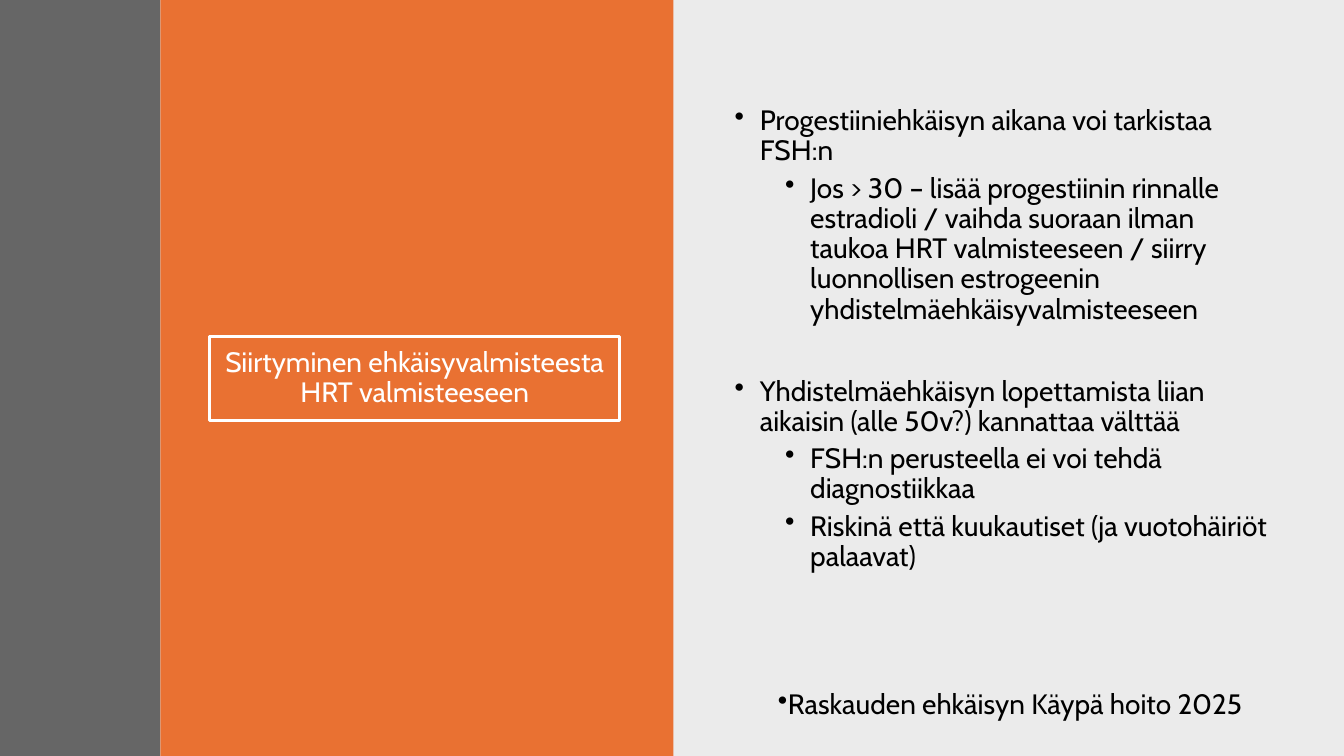
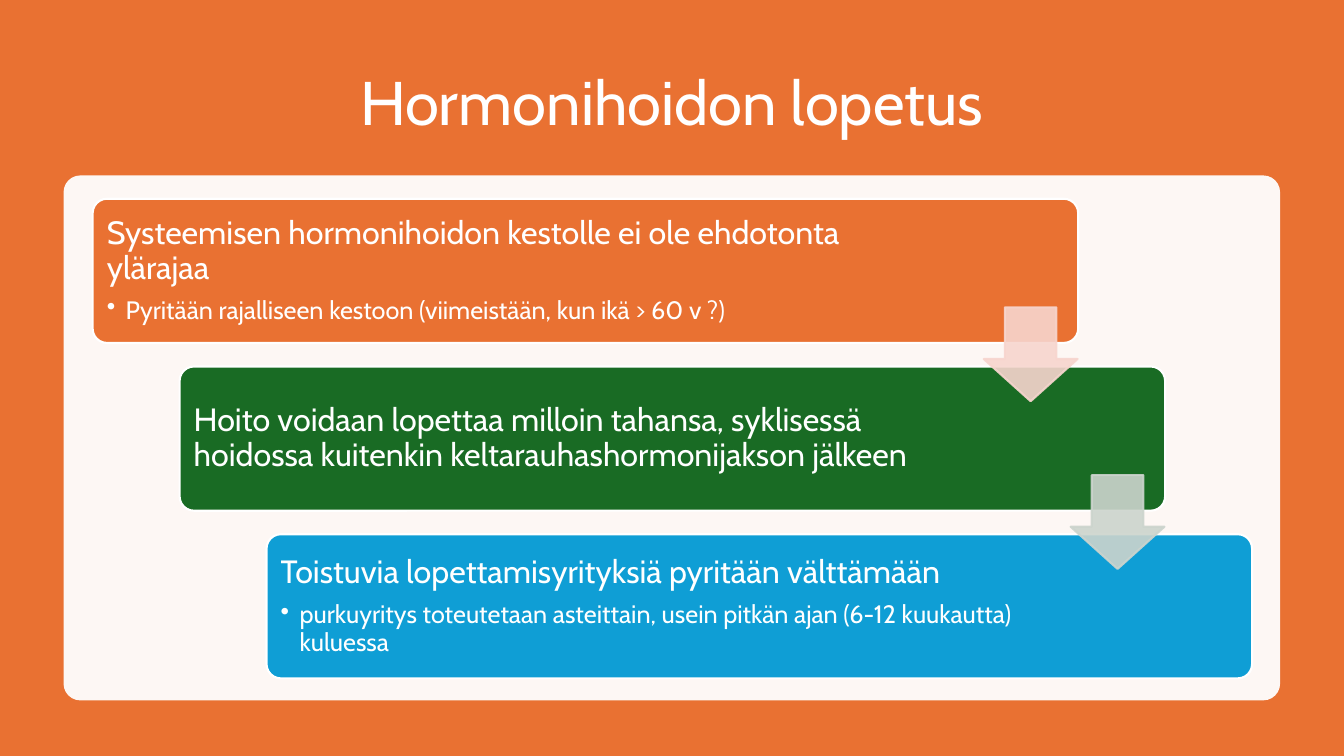
from dataclasses import dataclass

from lxml.etree import SubElement
from pptx import Presentation
from pptx.dml.color import RGBColor
from pptx.enum.shapes import MSO_SHAPE
from pptx.enum.text import MSO_ANCHOR, PP_ALIGN
from pptx.oxml.ns import qn
from pptx.util import Pt


@dataclass(frozen=True)
class Theme:
    font: str = "Cabin"
    white: str = "FFFFFF"
    black: str = "000000"
    grey: str = "404040"
    orange: str = "E97132"
    green: str = "196B24"
    blue: str = "0F9ED5"
    rose: str = "F7D5CE"
    sage: str = "CCD4CD"
    title: int = 44
    head: int = 23
    text: int = 20
    small: int = 18
    lines: float = 0.9


@dataclass(frozen=True)
class Item:
    """One paragraph; hang is (left margin, first-line indent) of a bullet."""
    text: str
    size: int
    color: str
    hang: tuple = None
    level: int = 0
    before: float = 0
    align: PP_ALIGN = PP_ALIGN.LEFT


class Deck:
    def __init__(self, theme, width, height):
        self.theme = theme
        self.show = Presentation()
        self.show.slide_width, self.show.slide_height = Pt(width), Pt(height)
        self.slide = None

    def page(self):
        self.slide = self.show.slides.add_slide(self.show.slide_layouts[6])

    def shape(self, kind, area, fill=None, line=None, width=1.5, alpha=100, adjust=()):
        form = self.slide.shapes.add_shape(kind, *map(Pt, area))
        form.shadow.inherit = False
        for index, value in enumerate(adjust):
            form.adjustments[index] = value
        if fill:
            form.fill.solid()
            form.fill.fore_color.rgb = RGBColor.from_string(fill)
        else:
            form.fill.background()
        if line:
            form.line.color.rgb = RGBColor.from_string(line)
            form.line.width = Pt(width)
        else:
            form.line.fill.background()
        if alpha < 100:
            for color in form.element.spPr.iter(qn("a:srgbClr")):
                SubElement(color, qn("a:alpha"), val=str(alpha * 1000))
        return form

    def band(self, area, fill, alpha=100):
        return self.shape(MSO_SHAPE.RECTANGLE, area, fill, alpha=alpha)

    def text(self, area, items, anchor=MSO_ANCHOR.TOP):
        box = self.slide.shapes.add_textbox(*map(Pt, area))
        self.put(box.text_frame, items, anchor)

    def title(self, area, text, size, frame=None):
        item = Item(text, size, self.theme.white, align=PP_ALIGN.CENTER)
        if frame:
            form = self.shape(MSO_SHAPE.RECTANGLE, area, line=frame, width=2)
            self.put(form.text_frame, [item], MSO_ANCHOR.MIDDLE)
        else:
            self.text(area, [item], MSO_ANCHOR.MIDDLE)

    def put(self, frame, items, anchor):
        """Fill a text frame, one paragraph for each item."""
        frame.word_wrap = True
        frame.vertical_anchor = anchor
        for index, item in enumerate(items):
            para = frame.add_paragraph() if index else frame.paragraphs[0]
            if item.hang:
                self.bullet(para, *item.hang)
            para.level = item.level
            para.alignment = item.align
            para.line_spacing = self.theme.lines
            para.space_before = Pt(item.before)
            run = para.add_run()
            run.text = item.text
            run.font.name = self.theme.font
            run.font.size = Pt(item.size)
            run.font.color.rgb = RGBColor.from_string(item.color)

    def bullet(self, para, left, first):
        props = para._p.get_or_add_pPr()
        props.set("marL", str(Pt(left)))
        props.set("indent", str(Pt(first)))
        SubElement(props, qn("a:buChar"), char="•")

    def step(self, area, fill, head, note, right):
        """A rounded box with a heading and, if given, one bullet."""
        look = self.theme
        form = self.shape(MSO_SHAPE.ROUNDED_RECTANGLE, area, fill, look.white, adjust=[0.1])
        frame = form.text_frame
        frame.margin_left = frame.margin_top = frame.margin_bottom = Pt(7.2)
        frame.margin_right = Pt(right)
        items = [Item(head, look.head, look.white)]
        if note:
            items.append(Item(note, look.small, look.white, (13.5, -13.5), 1, 8))
        self.put(frame, items, MSO_ANCHOR.MIDDLE)

    def arrow(self, left, top, color):
        self.shape(MSO_SHAPE.DOWN_ARROW, (left, top, 67, 67), color, color,
                   alpha=90, adjust=[0.55, 0.45])


def switch(deck):
    look = deck.theme
    deck.page()
    deck.band((480, 0, 480, 540), look.black, 8)
    deck.band((114.5, 0, 366.5, 540), look.orange)
    deck.title((149.8, 240.5, 293, 59.8), "Siirtyminen ehkäisyvalmisteesta HRT valmisteeseen",
               look.text, look.white)
    deck.band((0, 0, 114.5, 540), look.grey, 80)

    def point(text, before=0):
        return Item(text, look.text, look.black, (18, -18), 0, before)

    def sub(text):
        return Item(text, look.text, look.black, (54, -18), 1, 5)

    deck.text((517.7, 72.5, 398.2, 410.5), [
        point("Progestiiniehkäisyn aikana voi tarkistaa FSH:n"),
        sub("Jos > 30 – lisää progestiinin rinnalle estradioli / vaihda suoraan ilman taukoa "
            "HRT valmisteeseen / siirry luonnollisen estrogeenin "
            "yhdistelmäehkäisyvalmisteeseen"),
        point("Yhdistelmäehkäisyn lopettamista liian aikaisin (alle 50v?) kannattaa välttää", 37),
        sub("FSH:n perusteella ei voi tehdä diagnostiikkaa"),
        sub("Riskinä että kuukautiset (ja vuotohäiriöt palaavat)"),
    ])
    deck.text((548.6, 489.6, 366.5, 44), [
        Item("Raskauden ehkäisyn Käypä hoito 2025", look.text, look.black, (0, -18))])


def ending(deck):
    look = deck.theme
    deck.page()
    deck.band((0, 0, 960, 540), look.orange)
    deck.title((66, 36, 828, 79.2), "Hormonihoidon lopetus", look.title)
    deck.shape(MSO_SHAPE.ROUNDED_RECTANGLE, (45.4, 125.3, 869, 375), look.white,
               alpha=95, adjust=[0.032])
    steps = [
        (look.orange, "Systeemisen hormonihoidon kestolle ei ole ehdotonta ylärajaa",
         "Pyritään rajalliseen kestoon (viimeistään, kun ikä > 60 v ?)", 113),
        (look.green, "Hoito voidaan lopettaa milloin tahansa, syklisessä hoidossa kuitenkin "
         "keltarauhashormonijakson jälkeen", None, 136),
        (look.blue, "Toistuvia lopettamisyrityksiä pyritään välttämään",
         "purkuyritys toteutetaan asteittain, usein pitkän ajan (6-12 kuukautta) kuluessa", 136),
    ]
    spots = [(66.2 + 62.1 * n, 142 + 119.8 * n) for n in range(len(steps))]
    for spot, step in zip(spots, steps):
        deck.step((*spot, 704, 103), *step)
    for (left, top), color in zip(spots, (look.rose, look.sage)):
        deck.arrow(left + 636.5, top + 77.6, color)


def main():
    deck = Deck(Theme(), 960, 540)
    switch(deck)
    ending(deck)
    deck.show.save("out.pptx")


if __name__ == "__main__":
    main()
